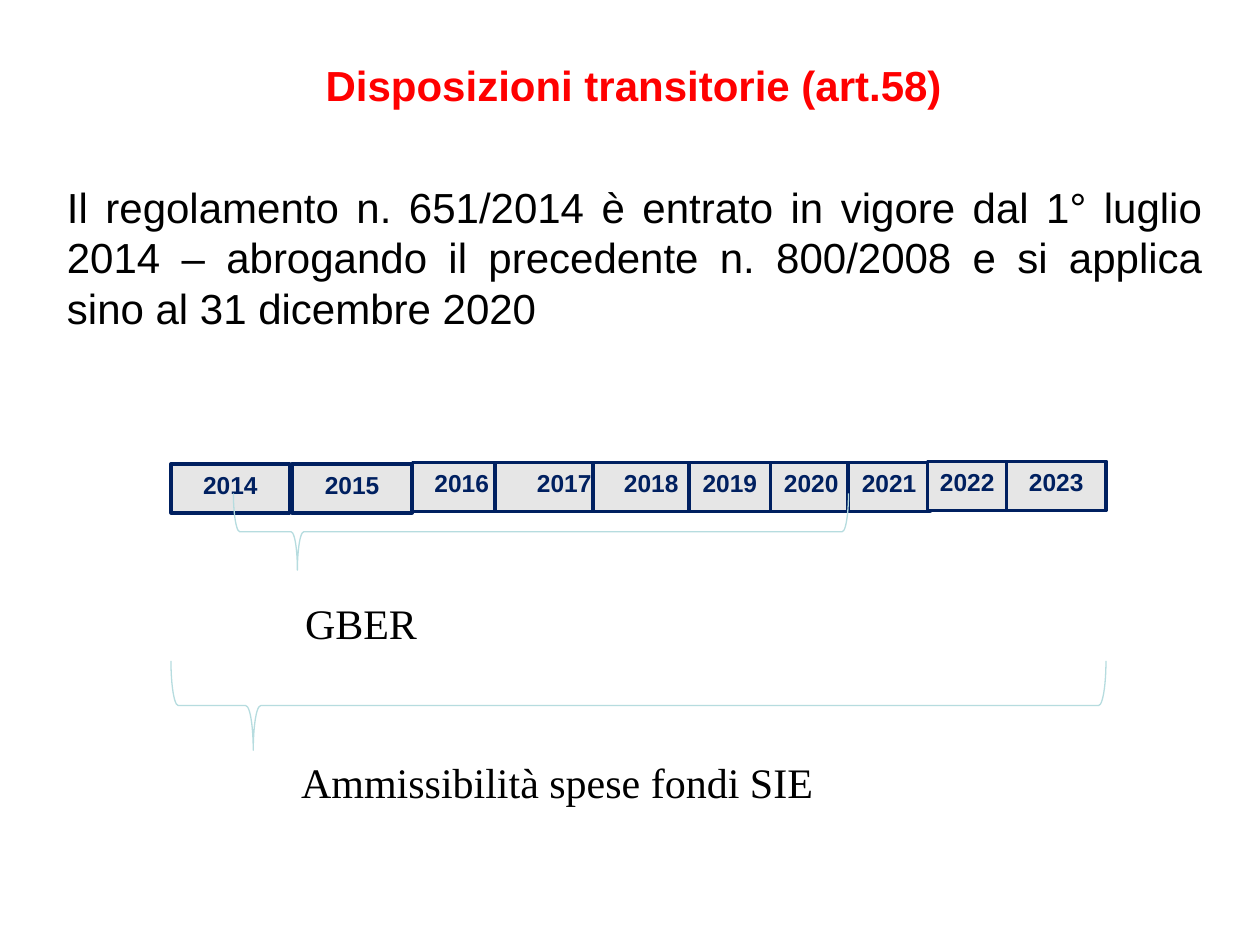
from typing import NamedTuple

from pptx import Presentation
from pptx.dml.color import RGBColor
from pptx.enum.shapes import MSO_SHAPE as Preset
from pptx.enum.text import MSO_ANCHOR as Anchor, PP_ALIGN as Align
from pptx.util import Cm, Pt

NAVY = "002060"
GREY = "E6E6E6"
TEAL = "B6DCDF"
RED = "FF0000"
BLACK = "000000"
SERIF = "Times New Roman"


class Box(NamedTuple):
    left: float
    top: float
    width: float
    height: float

    def lengths(self):
        return [Cm(value) for value in self]


class Lettering(NamedTuple):
    size: float
    color: str
    font: str = "Arial"
    bold: bool = False
    align: Align = Align.LEFT


class Year(NamedTuple):
    label: str
    left: float
    width: float
    top: float = 9.32


class Period(NamedTuple):
    brace: Box
    point: float
    label: str
    label_box: Box


YEARS = [
    Year("2014", 3.45, 2.39, 9.35),
    Year("2015", 5.89, 2.42, 9.35),
    Year("2016", 8.32, 1.98),
    Year("2017", 9.98, 2.79),
    Year("2018", 11.96, 2.34),
    Year("2019", 13.89, 1.65),
    Year("2020", 15.53, 1.65),
    Year("2021", 17.1, 1.65),
    Year("2022", 18.7, 1.6, 9.3),
    Year("2023", 20.29, 2.01, 9.3),
]
PERIODS = [
    Period(Box(10.13, 4.52, 1.55, 12.4), 0.896,
           "GBER", Box(5.9, 11.93, 6.4, 1.27)),
    Period(Box(11.97, 4.8, 1.8, 18.85), 0.912,
           "Ammissibilità spese fondi SIE", Box(5.82, 15.13, 15.67, 1.27)),
]


def rgb(color: str) -> RGBColor:
    return RGBColor.from_string(color)


def write(frame, text: str, style: Lettering):
    frame.word_wrap = True
    frame.text = text
    paragraph = frame.paragraphs[0]
    paragraph.alignment = style.align
    font = paragraph.runs[0].font
    font.name = style.font
    font.size = Pt(style.size)
    font.bold = style.bold
    font.color.rgb = rgb(style.color)
    return paragraph


def add_text(slide, box: Box, text: str, style: Lettering,
             anchor: Anchor = Anchor.TOP):
    frame = slide.shapes.add_textbox(*box.lengths()).text_frame
    frame.vertical_anchor = anchor
    return write(frame, text, style)


def outline(shape, color: str, width: float) -> None:
    shape.shadow.inherit = False
    shape.line.color.rgb = rgb(color)
    shape.line.width = Pt(width)


def add_year(slide, year: Year) -> None:
    box = Box(year.left, year.top, year.width, 0.99)
    cell = slide.shapes.add_shape(Preset.RECTANGLE, *box.lengths())
    outline(cell, NAVY, 2)
    cell.fill.solid()
    cell.fill.fore_color.rgb = rgb(GREY)
    frame = cell.text_frame
    frame.vertical_anchor = Anchor.TOP
    frame.margin_left = frame.margin_right = Cm(0.1)
    write(frame, year.label,
          Lettering(14, NAVY, bold=True, align=Align.CENTER))


def add_brace(slide, period: Period) -> None:
    brace = slide.shapes.add_shape(Preset.RIGHT_BRACE, *period.brace.lengths())
    brace.rotation = 90
    brace.adjustments[0] = 0.083
    brace.adjustments[1] = period.point
    brace.fill.background()
    outline(brace, TEAL, 0.75)


def main() -> None:
    deck = Presentation()
    deck.slide_width, deck.slide_height = Cm(25.4), Cm(19.05)
    slide = deck.slides.add_slide(deck.slide_layouts[6])

    add_text(slide, Box(1.98, 0.76, 21.59, 1.88),
             "Disposizioni transitorie (art.58)",
             Lettering(24, RED, bold=True, align=Align.CENTER), Anchor.MIDDLE)
    regulation = add_text(
        slide, Box(1.1, 3.53, 23.39, 12.57),
        "Il regolamento n. 651/2014 è entrato in vigore dal 1° luglio 2014 – "
        "abrogando il precedente n. 800/2008 e si applica sino al 31 dicembre 2020",
        Lettering(24, BLACK, align=Align.JUSTIFY))
    regulation.space_before = Pt(4.8)

    for year in YEARS:
        add_year(slide, year)
    for period in PERIODS:
        add_brace(slide, period)
    for period in PERIODS:
        add_text(slide, period.label_box, period.label,
                 Lettering(24, BLACK, SERIF))

    deck.save("out.pptx")


if __name__ == "__main__":
    main()
